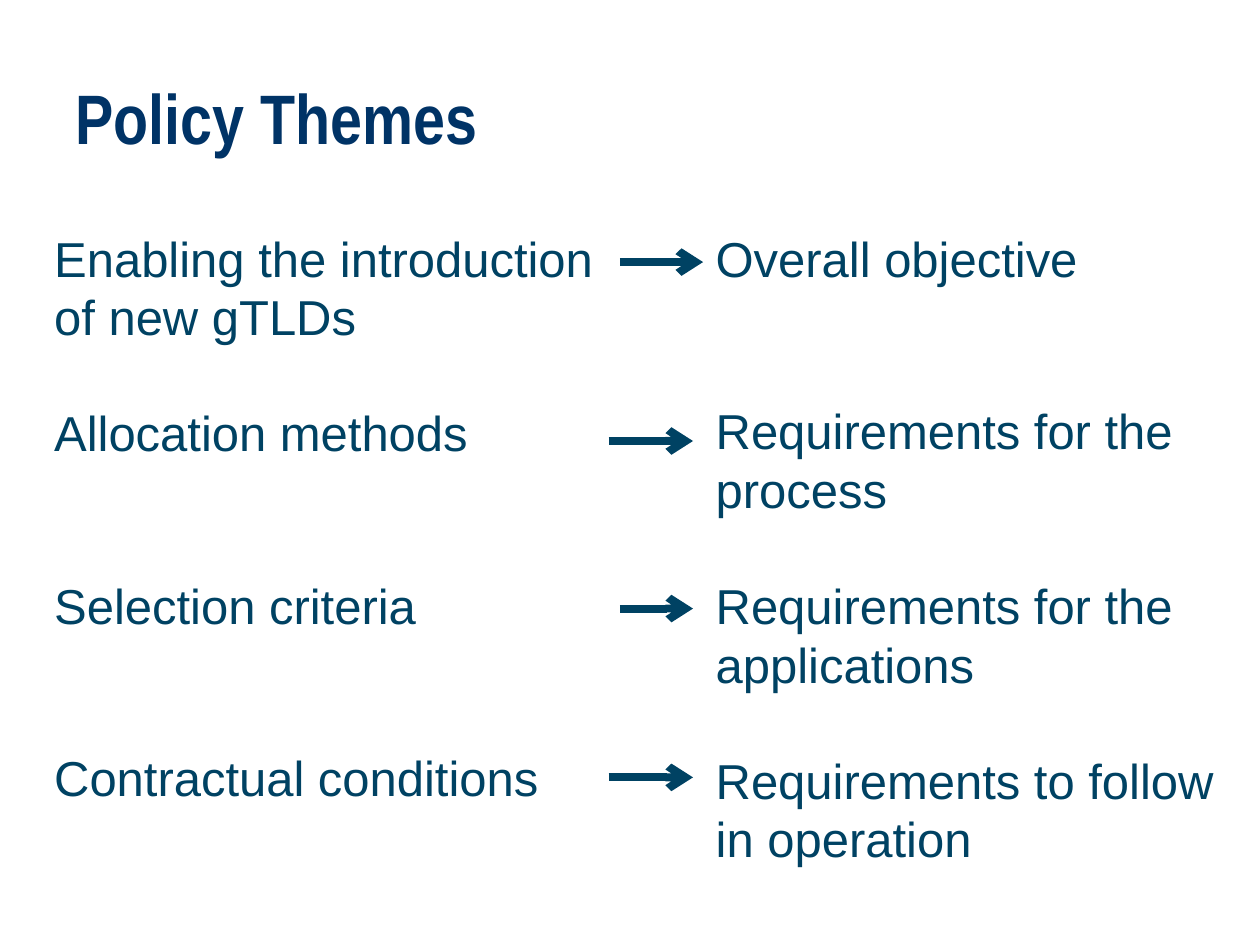
from lxml import etree
from pptx import Presentation
from pptx.dml.color import RGBColor
from pptx.enum.shapes import MSO_CONNECTOR
from pptx.enum.text import MSO_ANCHOR, MSO_AUTO_SIZE, PP_ALIGN
from pptx.oxml.ns import qn
from pptx.util import Inches, Pt

NAVY = "003366"
TEAL = "004263"
LINE_PITCH = 32.5
LINE_GAP = 6.75
LINES_PER_ROW = 3


def place(shape, left, top, width, height):
    shape.left, shape.top = Inches(left), Inches(top)
    shape.width, shape.height = Inches(width), Inches(height)
    shape.text_frame.word_wrap = True
    shape.text_frame.auto_size = MSO_AUTO_SIZE.NONE


def color(value):
    return RGBColor.from_string(value)


presentation = Presentation()
presentation.slide_width = Inches(10)
presentation.slide_height = Inches(7.5)
slide = presentation.slides.add_slide(presentation.slide_layouts[3])
slide.background.fill.solid()
slide.background.fill.fore_color.rgb = color("FFFFFF")

title = slide.shapes.title
place(title, 0.5, 0.3, 9, 1.25)
title.text_frame.text = "Policy Themes"
title.text_frame.vertical_anchor = MSO_ANCHOR.MIDDLE
heading = title.text_frame.paragraphs[0]
heading.alignment = PP_ALIGN.LEFT
heading_font = heading.runs[0].font
heading_font.name = "Arial Narrow"
heading_font.size = Pt(40)
heading_font.bold = True
heading_font.color.rgb = color(NAVY)

themes = [
    ["Enabling the introduction", "of new gTLDs"],
    ["Allocation methods"],
    ["Selection criteria"],
    ["Contractual conditions"],
]
requirements = [
    ["Overall objective"],
    ["Requirements for the", "process"],
    ["Requirements for the", "applications"],
    ["Requirements to follow", "in operation"],
]
columns = [
    (1, themes, (0.33, 1.85, 4.5, 4.83)),
    (2, requirements, (5.58, 1.85, 5, 5.08)),
]

for index, rows, box in columns:
    body = slide.placeholders[index]
    place(body, *box)
    text_frame = body.text_frame
    text_frame.text = "\n".join(line for row in rows for line in row)
    gaps = []
    for row in rows:
        gaps += [LINE_GAP + LINE_PITCH * (LINES_PER_ROW - len(row) + 0)]
        gaps += [LINE_GAP] * (len(row) - 1)
    gaps = [0]
    for position, row in enumerate(rows):
        if position:
            empty_lines = LINES_PER_ROW - len(rows[position - 1])
            gaps.append(LINE_GAP + LINE_PITCH * empty_lines)
        gaps += [LINE_GAP] * (len(row) - 1)
    for paragraph, gap in zip(text_frame.paragraphs, gaps):
        properties = paragraph._p.get_or_add_pPr()
        properties.set("marL", "0")
        properties.set("indent", "0")
        etree.SubElement(properties, qn("a:buNone"))
        paragraph.alignment = PP_ALIGN.LEFT
        paragraph.line_spacing = 0.8
        paragraph.space_before = Pt(gap)
        font = paragraph.runs[0].font
        font.name = "Arial"
        font.size = Pt(28)
        font.color.rgb = color(TEAL)

arrows = [(4.92, 5.58, 2.08), (4.83, 5.5, 3.5), (4.92, 5.5, 4.83), (4.83, 5.5, 6.17)]
for start, end, height in arrows:
    arrow = slide.shapes.add_connector(
        MSO_CONNECTOR.STRAIGHT, Inches(start), Inches(height), Inches(end), Inches(height)
    )
    arrow.line.color.rgb = color(TEAL)
    arrow.line.width = Pt(4.5)
    etree.SubElement(arrow.line._get_or_add_ln(), qn("a:tailEnd"), type="arrow")
    etree.SubElement(arrow._element.spPr, qn("a:effectLst"))

presentation.save("out.pptx")
